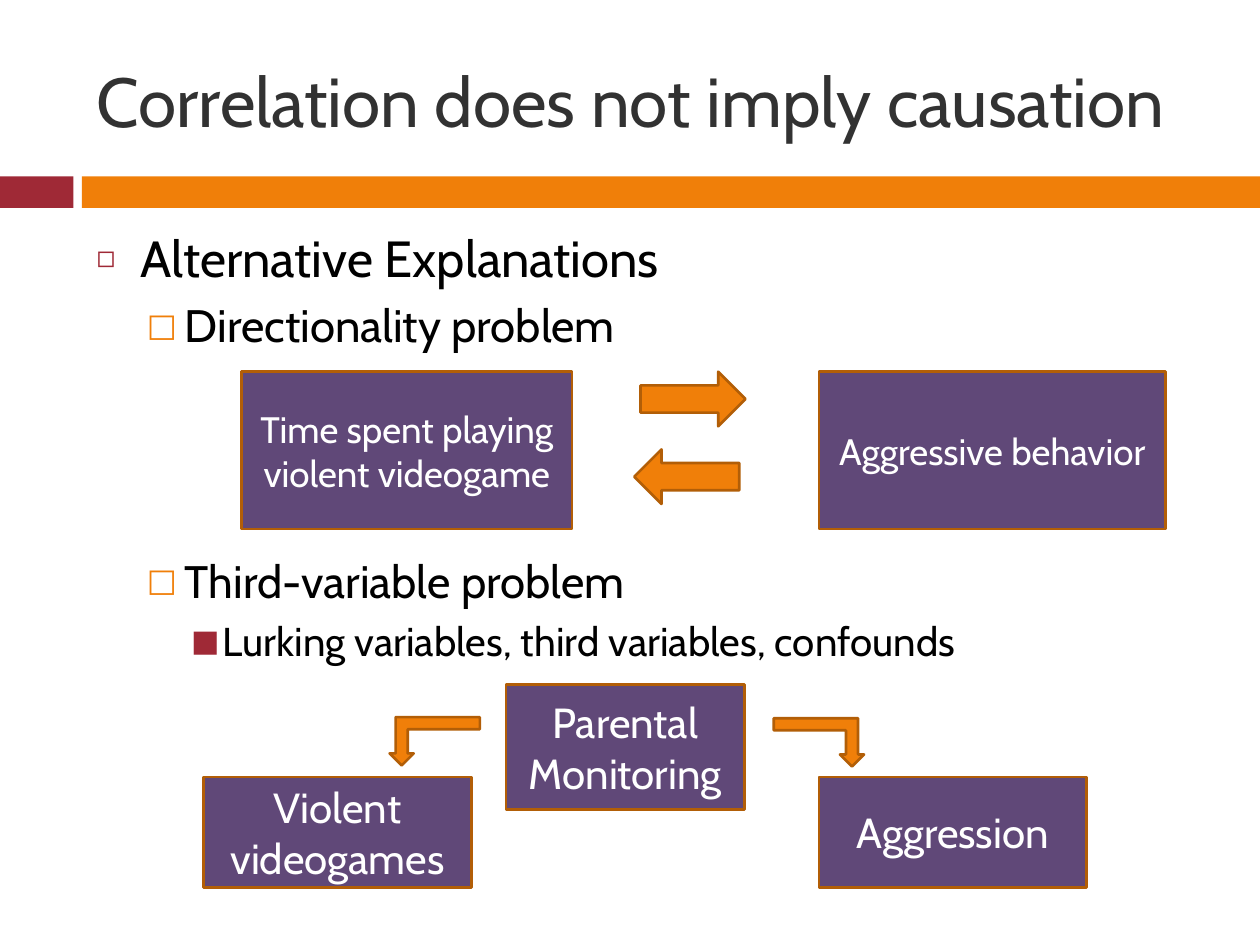
from dataclasses import dataclass
from lxml.etree import SubElement as Sub
from pptx import Presentation
from pptx.dml.color import RGBColor as Rgb
from pptx.enum.shapes import MSO_SHAPE as Kind
from pptx.enum.text import MSO_ANCHOR as Anchor, MSO_AUTO_SIZE as Fit, PP_ALIGN as Align
from pptx.oxml.ns import qn
from pptx.util import Inches, Pt

COLS, ROWS = 120, 90


@dataclass(frozen=True)
class Theme:
    """Colours, font and type sizes of the slide."""
    font: str = "Cabin"
    ink: str = "000000"
    head: str = "323232"
    red: str = "9F2936"
    gold: str = "F07F09"
    edge: str = "B25E07"
    plum: str = "604878"
    pale: str = "FFFFFF"
    title: float = 39.6
    tiers: tuple = (29, 26, 23)
    wide: float = 21
    small: float = 24


T = Theme()
LEVELS = (
    dict(left=0.35, hang=0.35, mark="◻", hue=T.red, pct=60),
    dict(left=0.7, hang=0.3, mark="□", hue=T.gold, pct=70),
    dict(left=1, hang=0.25, mark="■", hue=T.red, pct=75),
)


def put(obj, **vals):
    """Set each named value on an object."""
    for key, val in vals.items():
        setattr(obj, key, val)


def place(prs, col, row, wide, high):
    """Turn grid columns and rows into slide lengths."""
    x, y = prs.slide_width / COLS, prs.slide_height / ROWS
    return [round(n) for n in (col * x, row * y, wide * x, high * y)]


def write(para, text, size, hue, **form):
    """Fill a paragraph with one styled run."""
    put(para, **form)
    run = para.add_run()
    run.text = text
    put(run.font, name=T.font, size=Pt(size))
    run.font.color.rgb = Rgb.from_string(hue)


def bullet(para, left, hang, mark, hue, pct):
    """Give a paragraph its indent and coloured bullet."""
    props = para._p.get_or_add_pPr()
    props.set("marL", str(Inches(left)))
    props.set("indent", str(-Inches(hang)))
    tint = Sub(props, qn("a:buClr"))
    Sub(tint, qn("a:srgbClr"), val=hue)
    Sub(props, qn("a:buSzPct"), val=str(pct * 1000))
    Sub(props, qn("a:buFont"), typeface=T.font)
    Sub(props, qn("a:buChar"), char=mark)


def frame(prs, holder, cell, anchor):
    """Move a placeholder and return its text frame."""
    put(holder, **dict(zip(("left", "top", "width", "height"), place(prs, *cell))))
    put(holder.text_frame, word_wrap=True, auto_size=Fit.NONE, vertical_anchor=anchor)
    return holder.text_frame


def shape(prs, slide, kind, cell, fill, edge=T.edge):
    """Add a flat filled shape, outlined if an edge is given."""
    item = slide.shapes.add_shape(kind, *place(prs, *cell))
    item.shadow.inherit = False
    item.fill.solid()
    item.fill.fore_color.rgb = Rgb.from_string(fill)
    if edge:
        item.line.color.rgb = Rgb.from_string(edge)
        item.line.width = Pt(1.5)
    else:
        item.line.fill.background()
    return item


def box(prs, slide, cell, text, size):
    """Add a labelled variable box."""
    body = shape(prs, slide, Kind.RECTANGLE, cell, T.plum).text_frame
    put(body, word_wrap=True, vertical_anchor=Anchor.MIDDLE)
    write(body.paragraphs[0], text, size, T.pale, alignment=Align.CENTER)


def bend(prs, slide, cell, flip):
    """Add an elbow arrow that points down."""
    item = shape(prs, slide, Kind.BENT_UP_ARROW, cell, T.gold)
    item.rotation = 180
    if flip:
        item._element.spPr.xfrm.set("flipH", "1")


def outline(body, rows):
    """Write the bulleted list of level, gap and text."""
    for i, (level, gap, text) in enumerate(rows):
        para = body.add_paragraph() if i else body.paragraphs[0]
        write(para, text, T.tiers[level], T.ink, level=level, space_before=Pt(gap))
        bullet(para, **LEVELS[level])


def main():
    """Build and save the slide."""
    prs = Presentation()
    put(prs, slide_width=Inches(10), slide_height=Inches(7.5))
    slide = prs.slides.add_slide(prs.slide_layouts[1])
    title, body = slide.placeholders

    for col, wide, hue in ((0, 7, T.red), (7.8, 112.2, T.gold)):
        shape(prs, slide, Kind.RECTANGLE, (col, 16.8, wide, 3), hue, None)

    head = frame(prs, title, (8, 3, 107, 13), Anchor.MIDDLE)
    write(head.paragraphs[0], "Correlation does not imply causation",
          T.title, T.head, alignment=Align.LEFT)
    outline(frame(prs, body, (8, 21, 107, 59), Anchor.TOP), (
        (0, 7, "Alternative Explanations"),
        (1, 5.5, "Directionality problem"),
        (1, 115, "Third-variable problem"),
        (2, 5, "Lurking variables, third variables, confounds"),
    ))

    for cell, text, size in (
        ((23, 35.4, 31.5, 15), "Time spent playing violent videogame", T.wide),
        ((78, 35.4, 33, 15), "Aggressive behavior", T.wide),
        ((48.2, 65.2, 22.7, 11.9), "Parental Monitoring", T.small),
        ((19.4, 74, 25.5, 10.5), "Violent videogames", T.small),
        ((78, 74, 25.5, 10.5), "Aggression", T.small),
    ):
        box(prs, slide, cell, text, size)

    for kind, col, row in ((Kind.RIGHT_ARROW, 61, 35.4), (Kind.LEFT_ARROW, 60.4, 42.8)):
        shape(prs, slide, kind, (col, row, 10, 5.2), T.gold)
    for col, row, flip in ((37.1, 68.3, False), (73.7, 68.4, True)):
        bend(prs, slide, (col, row, 8.6, 4.6), flip)

    prs.save("out.pptx")


if __name__ == "__main__":
    main()
